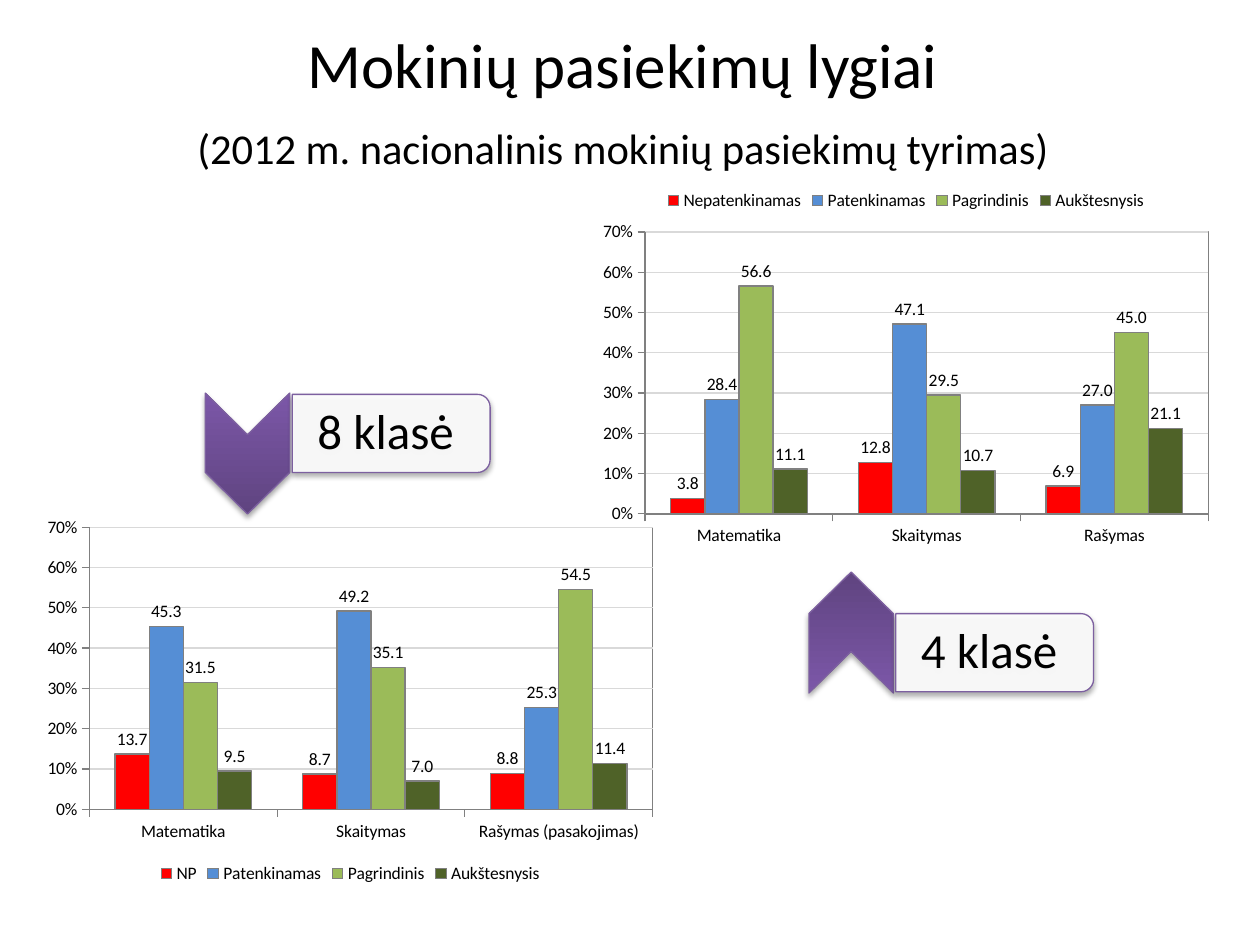
"""Slide comparing pupils' achievement levels in grades 4 and 8."""
from math import cos, pi, sin

from lxml import etree
from pptx import Presentation
from pptx.chart.data import CategoryChartData
from pptx.dml.color import RGBColor
from pptx.enum.chart import XL_CHART_TYPE as ChartType
from pptx.enum.chart import XL_LABEL_POSITION as LabelPos
from pptx.enum.chart import XL_LEGEND_POSITION as LegendPos
from pptx.enum.chart import XL_TICK_MARK as Tick
from pptx.enum.text import MSO_ANCHOR as Anchor
from pptx.enum.text import PP_ALIGN as Align
from pptx.oxml import parse_xml
from pptx.oxml.ns import nsdecls, qn
from pptx.util import Inches, Pt

COLORS = {
    "text": "000000", "axis": "808080", "grid": "D9D9D9", "white": "FFFFFF",
    "violet_dark": "5F4480", "violet_light": "7C57A8", "violet_line": "7D60A0",
}
LEVEL_COLORS = ["FF0000", "558ED5", "9BBB59", "4F6228"]
RGB = {name: RGBColor.from_string(value) for name, value in COLORS.items()}

prs = Presentation()
prs.slide_width, prs.slide_height = Inches(10), Inches(7.5)
slide = prs.slides.add_slide(prs.slide_layouts[6])


def add_levels_chart(left, top, legend_pos, plot_top, subjects, levels):
    data = CategoryChartData(number_format="0.0")
    data.categories = subjects
    for level, shares in levels.items():
        data.add_series(level, shares)
    chart = slide.shapes.add_chart(
        ChartType.COLUMN_CLUSTERED, Inches(left), Inches(top), Inches(5), Inches(3), data).chart
    chart.font.name, chart.font.size = "Calibri", Pt(10)
    chart.font.color.rgb = RGB["text"]
    chart.has_title = False
    chart.has_legend = True
    chart.legend.position = legend_pos
    chart.legend.include_in_layout = False

    shares_axis = chart.value_axis
    shares_axis.minimum_scale, shares_axis.maximum_scale = 0, 70
    shares_axis.major_unit = 10
    shares_axis.tick_labels.number_format = '0"%"'
    shares_axis.tick_labels.number_format_is_linked = False
    gridline = shares_axis.major_gridlines.format.line
    gridline.color.rgb, gridline.width = RGB["grid"], Pt(0.75)
    for axis in (shares_axis, chart.category_axis):
        axis.major_tick_mark = Tick.OUTSIDE
        axis.format.line.color.rgb = RGB["axis"]
        axis.format.line.width = Pt(0.75)

    plot = chart.plots[0]
    plot.vary_by_categories = False
    plot.gap_width, plot.overlap = 150, 0
    plot.has_data_labels = True
    labels = plot.data_labels
    labels.show_value, labels.position = True, LabelPos.OUTSIDE_END
    labels.number_format, labels.number_format_is_linked = "0.0", False
    for series, color in zip(plot.series, LEVEL_COLORS):
        series.format.fill.solid()
        series.format.fill.fore_color.rgb = RGBColor.from_string(color)
        series.format.line.color.rgb = RGB["axis"]
        series.format.line.width = Pt(0.75)

    plot_area = chart.element.find(f".//{qn('c:plotArea')}")
    for old_layout in plot_area.findall(qn("c:layout")):
        plot_area.remove(old_layout)
    plot_area.insert(0, parse_xml(
        f'<c:layout {nsdecls("c")}><c:manualLayout><c:layoutTarget val="inner"/>'
        f'<c:xMode val="edge"/><c:yMode val="edge"/><c:x val="0.086"/><c:y val="{plot_top}"/>'
        '<c:w val="0.894"/><c:h val="0.746"/></c:manualLayout></c:layout>'))
    plot_area.append(parse_xml(
        f'<c:spPr {nsdecls("c", "a")}><a:noFill/><a:ln w="9525"><a:solidFill>'
        f'<a:srgbClr val="{COLORS["axis"]}"/></a:solidFill></a:ln></c:spPr>'))


def add_outline(points):
    vertices = [(Inches(x), Inches(y)) for x, y in points]
    builder = slide.shapes.build_freeform(*vertices[0])
    builder.add_line_segments(vertices[1:], close=True)
    outline = builder.convert_to_shape()
    outline.line.color.rgb, outline.line.width = RGB["violet_line"], Pt(0.75)
    outline.shadow.inherit = False
    outline.element.spPr.find(qn("a:effectLst")).append(parse_xml(
        f'<a:outerShdw {nsdecls("a")} blurRad="40000" dist="23000" dir="5400000" rotWithShape="0">'
        '<a:srgbClr val="000000"><a:alpha val="35000"/></a:srgbClr></a:outerShdw>'))
    return outline


title = slide.shapes.add_textbox(Inches(0.5), Inches(0.3), Inches(9), Inches(1.01)).text_frame
title.word_wrap = True
title.vertical_anchor = Anchor.MIDDLE
heading = title.paragraphs[0]
heading.alignment = Align.CENTER
heading.font.name, heading.font.size = "Calibri", Pt(36)
heading.font.color.rgb = RGB["text"]
heading.add_run().text = "Mokinių pasiekimų lygiai "
heading.add_line_break()
study = heading.add_run()
study.text = "(2012 m. nacionalinis mokinių pasiekimų tyrimas)"
study.font.size = Pt(24.3)
heading.add_run().text = " "

add_levels_chart(4.69, 1.4, LegendPos.TOP, 0.147, ["Matematika", "Skaitymas", "Rašymas"], {
    "Nepatenkinamas": (3.8, 12.8, 6.9),
    "Patenkinamas": (28.4, 47.1, 27),
    "Pagrindinis": (56.6, 29.5, 45),
    "Aukštesnysis": (11.1, 10.7, 21.1),
})

arrow_width, arrow_height, notch = 0.67, 0.96, 0.33
label_width, label_height, radius = 1.57, 0.62, 0.1
for grade, left, arrow_top, label_top, rotation in (
        ("8 klasė", 1.63, 3.12, 3.13, 0), ("4 klasė", 6.42, 4.54, 4.87, 180)):
    middle, right = left + arrow_width / 2, left + arrow_width
    shoulder = arrow_top + arrow_height - notch
    arrow = add_outline([
        (left, arrow_top), (middle, arrow_top + notch), (right, arrow_top),
        (right, shoulder), (middle, arrow_top + arrow_height), (left, shoulder)])
    arrow.rotation = rotation
    arrow.fill.gradient()
    arrow.fill.gradient_angle = 90
    for stop, shade in zip(arrow.fill.gradient_stops, ("violet_dark", "violet_light")):
        stop.color.rgb = RGB[shade]

    label_left = right + 0.02
    label_right, label_bottom = label_left + label_width, label_top + label_height
    corners = [(label_top + radius, -90), (label_bottom - radius, 0)]
    arcs = [(label_right - radius + radius * cos((start + step) * pi / 180),
             center + radius * sin((start + step) * pi / 180))
            for center, start in corners for step in range(0, 91, 15)]
    label = add_outline([(label_left, label_top), *arcs, (label_left, label_bottom)])
    label.fill.solid()
    label.fill.fore_color.rgb = RGB["white"]
    white = label.element.spPr.find(f"{qn('a:solidFill')}/{qn('a:srgbClr')}")
    etree.SubElement(white, qn("a:alpha")).set("val", "90000")
    frame = label.text_frame
    frame.word_wrap = True
    frame.vertical_anchor = Anchor.MIDDLE
    frame.margin_left = Inches(0.2)
    frame.margin_right = frame.margin_top = frame.margin_bottom = Inches(0.05)
    caption = frame.paragraphs[0]
    caption.text = grade
    caption.alignment, caption.line_spacing = Align.LEFT, 0.9
    caption.font.name, caption.font.size = "Calibri", Pt(28)
    caption.font.color.rgb = RGB["text"]

add_levels_chart(
    0.28, 4.05, LegendPos.BOTTOM, 0.045, ["Matematika", "Skaitymas", "Rašymas (pasakojimas)"], {
        "NP": (13.7, 8.7, 8.8),
        "Patenkinamas": (45.3, 49.2, 25.3),
        "Pagrindinis": (31.5, 35.1, 54.5),
        "Aukštesnysis": (9.5, 7, 11.4),
    })

prs.save("out.pptx")
